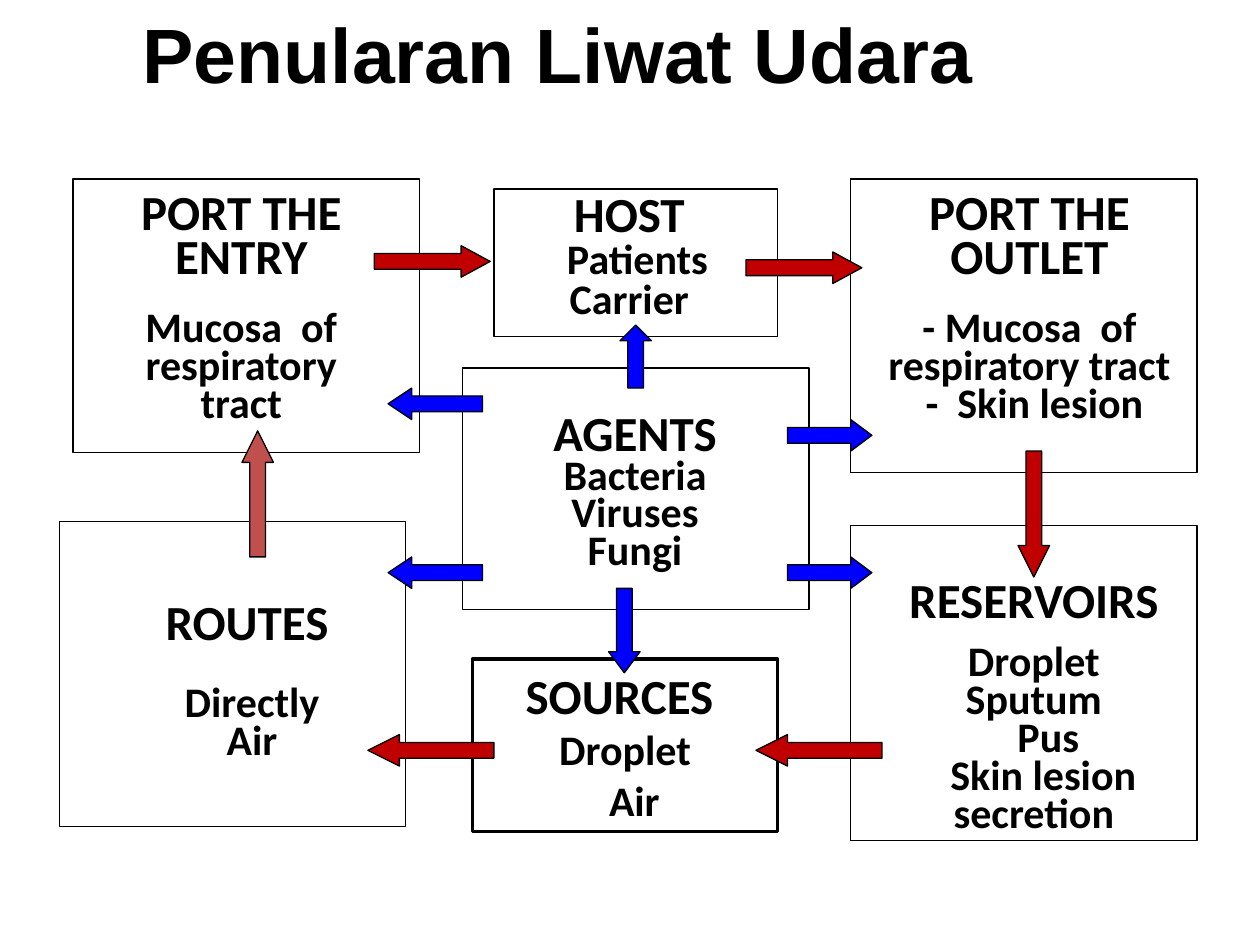
from dataclasses import dataclass

from pptx import Presentation
from pptx.dml.color import RGBColor
from pptx.enum.shapes import MSO_SHAPE
from pptx.enum.text import MSO_ANCHOR, MSO_AUTO_SIZE, PP_ALIGN
from pptx.util import Inches, Pt

BLACK, WHITE = "000000", "FFFFFF"
RED, BLUE, ROSE = "C00000", "0000FF", "C0504D"
ARROW_THICKNESS = 0.25
FRAME_FORMAT = {
    "word_wrap": True,
    "auto_size": MSO_AUTO_SIZE.SHAPE_TO_FIT_TEXT,
    "vertical_anchor": MSO_ANCHOR.TOP,
}
HEADING = {"name": "Calibri", "size": Pt(28), "bold": True}
DETAIL = HEADING | {"size": Pt(24)}
TITLE = {"name": "Arial", "size": Pt(44), "bold": True}


@dataclass(frozen=True)
class Box:
    left: float
    top: float
    width: float
    height: float


@dataclass(frozen=True)
class Line:
    """A paragraph, with its first-line indent in inches and space before in points."""
    text: str
    indent: float = 0
    before: float = 0


@dataclass(frozen=True)
class Stage:
    """A framed stage of the chain; without its own text area, the frame holds the text."""
    frame: Box
    heading: str
    details: tuple[Line, ...]
    spacing: float
    text_area: Box | None = None
    border: float = 0.75


@dataclass(frozen=True)
class Arrow:
    left: float
    top: float
    length: float
    direction: MSO_SHAPE
    color: str


RIGHT, LEFT = MSO_SHAPE.RIGHT_ARROW, MSO_SHAPE.LEFT_ARROW
UP, DOWN = MSO_SHAPE.UP_ARROW, MSO_SHAPE.DOWN_ARROW

STAGES = (
    Stage(Box(0.58, 1.42, 2.75, 2.17), "PORT THE ENTRY",
          (Line("Mucosa  of respiratory tract", before=16.5),),
          0.75, Box(0.75, 1.5, 2.33, 1.93)),
    Stage(Box(6.75, 1.42, 2.75, 2.33), "PORT THE OUTLET",
          (Line("- Mucosa  of respiratory tract", before=16.5),
           Line("-  Skin lesion", indent=0.08)),
          0.75, Box(6.92, 1.5, 2.5, 1.93)),
    Stage(Box(0.47, 4.14, 2.75, 2.42), "ROUTES",
          (Line("Directly", indent=0.08, before=22), Line("Air", indent=0.08)),
          0.75, Box(0.75, 4.75, 2.42, 1.35)),
    Stage(Box(6.75, 4.17, 2.75, 2.5), "RESERVOIRS",
          (Line("Droplet", before=11), Line("Sputum"), Line("Pus", indent=0.23),
           Line("Skin lesion secretion", indent=0.15)),
          0.75, Box(6.83, 4.58, 2.75, 2.1)),
    Stage(Box(3.92, 1.5, 2.25, 1.17), "HOST",
          (Line("Patients", indent=0.13), Line("Carrier")),
          0.8, Box(4.08, 1.5, 1.83, 1.11)),
    Stage(Box(3.67, 2.92, 2.75, 1.92), "AGENTS",
          (Line("Bacteria"), Line("Viruses"), Line("Fungi")),
          0.75, Box(3.75, 3.25, 2.58, 1.35)),
    Stage(Box(3.75, 5.23, 2.42, 1.37), "SOURCES ",
          (Line("Droplet"), Line("Air", indent=0.15)), 1.0, border=2),
)

ARROWS = (
    Arrow(5.92, 2, 0.92, RIGHT, RED),
    Arrow(8.08, 3.58, 1, DOWN, RED),
    Arrow(6, 5.83, 1, LEFT, RED),
    Arrow(2.92, 5.83, 1, LEFT, RED),
    Arrow(4.92, 2.58, 0.5, UP, BLUE),
    Arrow(6.25, 3.33, 0.67, RIGHT, BLUE),
    Arrow(6.25, 4.42, 0.67, RIGHT, BLUE),
    Arrow(4.83, 4.67, 0.67, DOWN, BLUE),
    Arrow(3.08, 4.42, 0.75, LEFT, BLUE),
    Arrow(3.08, 3.08, 0.75, LEFT, BLUE),
    Arrow(1.92, 3.42, 1, UP, ROSE),
    Arrow(2.97, 1.95, 0.92, RIGHT, RED),
)


def set_color(target, color: str) -> None:
    target.rgb = RGBColor.from_string(color)


def apply_format(target, values: dict) -> None:
    for name, value in values.items():
        setattr(target, name, value)


def inches(box: Box) -> tuple:
    return tuple(Inches(n) for n in (box.left, box.top, box.width, box.height))


def add_outlined(slide, kind: MSO_SHAPE, box: Box, fill: str, border: float = 0.75):
    shape = slide.shapes.add_shape(kind, *inches(box))
    shape.shadow.inherit = False
    shape.fill.solid()
    set_color(shape.fill.fore_color, fill)
    set_color(shape.line.color, BLACK)
    shape.line.width = Pt(border)
    return shape


def write_line(paragraph, line: Line, font: dict, spacing: float) -> None:
    apply_format(paragraph, {
        "alignment": PP_ALIGN.CENTER,
        "line_spacing": spacing,
        "space_before": Pt(line.before),
    })
    if line.indent:
        properties = paragraph._p.get_or_add_pPr()
        properties.set("marL", "0")
        properties.set("indent", str(Inches(line.indent)))
    run = paragraph.add_run()
    run.text = line.text
    apply_format(run.font, font)
    set_color(run.font.color, BLACK)


def add_stage_text(slide, stage: Stage, frame_shape) -> None:
    holder = frame_shape
    if stage.text_area:
        holder = slide.shapes.add_textbox(*inches(stage.text_area))
    text = holder.text_frame
    apply_format(text, FRAME_FORMAT)
    write_line(text.paragraphs[0], Line(stage.heading), HEADING, stage.spacing)
    for detail in stage.details:
        write_line(text.add_paragraph(), detail, DETAIL, stage.spacing)


def add_arrow(slide, arrow: Arrow) -> None:
    size = (arrow.length, ARROW_THICKNESS)
    if arrow.direction in (UP, DOWN):
        size = size[::-1]
    shape = add_outlined(slide, arrow.direction,
                         Box(arrow.left, arrow.top, *size), arrow.color)
    # The head takes a quarter of the arrow's length.
    shape.adjustments[1] = arrow.length / 4 / ARROW_THICKNESS


def add_title(slide, title: str) -> None:
    text = slide.shapes.add_textbox(*inches(Box(1, 0, 6.86, 0.84))).text_frame
    apply_format(text, FRAME_FORMAT | {"word_wrap": False})
    write_line(text.paragraphs[0], Line(title), TITLE, 1.0)


def main() -> None:
    presentation = Presentation()
    apply_format(presentation, {"slide_width": Inches(10), "slide_height": Inches(7.5)})
    slide = presentation.slides.add_slide(presentation.slide_layouts[6])
    frames = [add_outlined(slide, MSO_SHAPE.RECTANGLE, stage.frame, WHITE, stage.border)
              for stage in STAGES]
    for stage, frame_shape in zip(STAGES, frames):
        add_stage_text(slide, stage, frame_shape)
    for arrow in ARROWS:
        add_arrow(slide, arrow)
    add_title(slide, "Penularan Liwat Udara")
    presentation.save("out.pptx")


if __name__ == "__main__":
    main()
